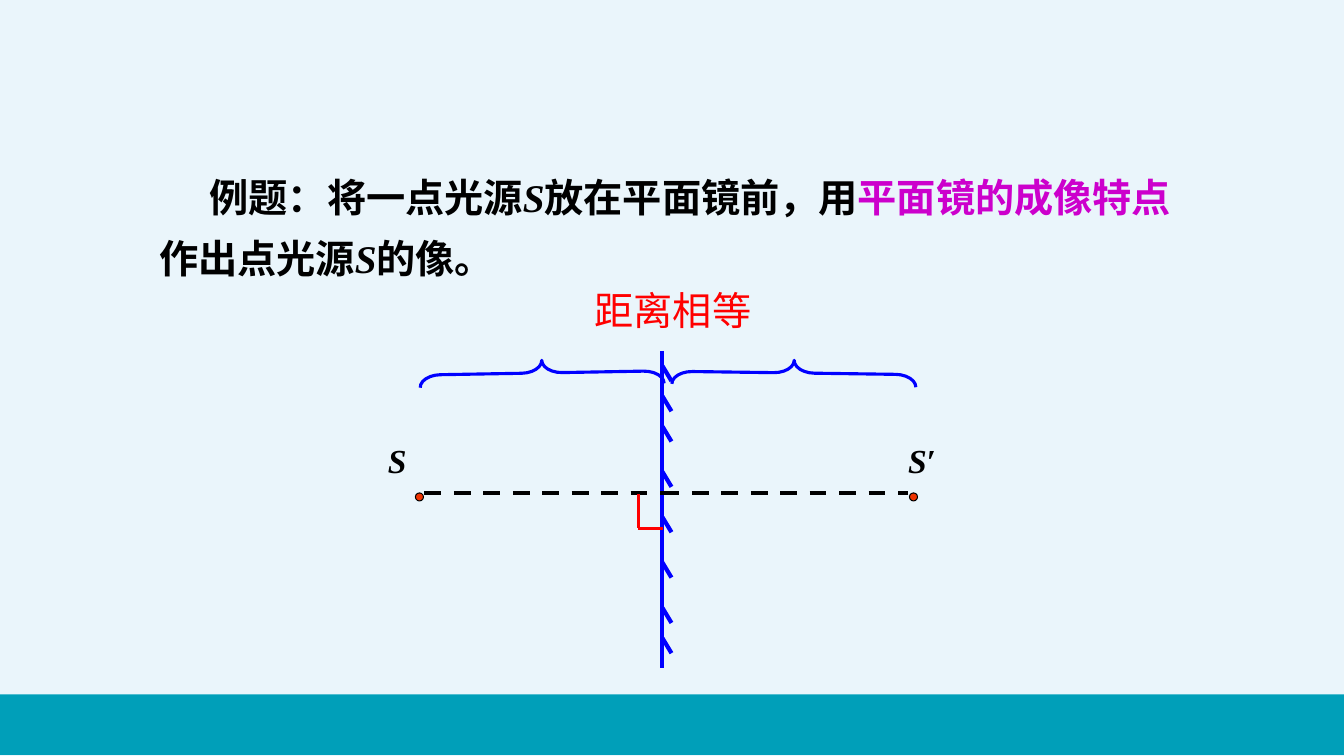
from dataclasses import dataclass

from lxml import etree
from pptx import Presentation
from pptx.dml.color import RGBColor
from pptx.enum.dml import MSO_LINE
from pptx.enum.shapes import MSO_CONNECTOR, MSO_SHAPE
from pptx.enum.text import MSO_AUTO_SIZE, PP_ALIGN
from pptx.oxml.ns import qn
from pptx.util import Inches, Pt

STRAIGHT = MSO_CONNECTOR.STRAIGHT
DASH = MSO_LINE.DASH
RECT, OVAL, BRACE = MSO_SHAPE.RECTANGLE, MSO_SHAPE.OVAL, MSO_SHAPE.LEFT_BRACE
GROW = MSO_AUTO_SIZE.SHAPE_TO_FIT_TEXT
LEFT, CENTER = PP_ALIGN.LEFT, PP_ALIGN.CENTER


@dataclass(frozen=True)
class Theme:
    sky: str = "EAF5FB"
    teal: str = "009FB9"
    blue: str = "0000FF"
    red: str = "FF0000"
    orange: str = "F03300"
    purple: str = "CC00CC"
    black: str = "000000"
    serif: str = "Times New Roman"
    sans: str = "Arial"
    body: int = 28
    label: int = 24
    thick: float = 3
    medium: float = 2.25
    thin: float = 0.75


THEME = Theme()


@dataclass(frozen=True)
class Span:
    text: str
    italic: bool = False
    color: str = THEME.black


@dataclass(frozen=True)
class Note:
    left: float
    top: float
    width: float
    height: float
    spans: tuple[Span, ...]
    size: int
    font: str = THEME.serif
    bold: bool = True
    wrap: bool = True
    align: PP_ALIGN = LEFT
    indent: float = 0
    spacing: float = 1


@dataclass(frozen=True)
class Stroke:
    x1: float
    y1: float
    x2: float
    y2: float
    color: str
    width: float
    dashed: bool = False


@dataclass(frozen=True)
class Figure:
    kind: MSO_SHAPE
    left: float
    top: float
    width: float
    height: float
    fill: str = ""
    line: str = ""
    weight: float = 0
    turn: float = 0
    curve: float = 0


def rgb(color: str) -> RGBColor:
    return RGBColor.from_string(color)


def draw_stroke(shapes, stroke: Stroke) -> None:
    ends = map(Inches, (stroke.x1, stroke.y1, stroke.x2, stroke.y2))
    link = shapes.add_connector(STRAIGHT, *ends)
    link.line.color.rgb = rgb(stroke.color)
    link.line.width = Pt(stroke.width)
    if stroke.dashed:
        link.line.dash_style = DASH
    etree.SubElement(link._element.spPr, qn("a:effectLst"))


def draw_figure(shapes, item: Figure) -> None:
    box = map(Inches, (item.left, item.top, item.width, item.height))
    shape = shapes.add_shape(item.kind, *box)
    shape.shadow.inherit = False
    shape.rotation = item.turn
    if item.curve:
        shape.adjustments[0] = item.curve
    if item.fill:
        shape.fill.solid()
        shape.fill.fore_color.rgb = rgb(item.fill)
    else:
        shape.fill.background()
    if item.line:
        shape.line.color.rgb = rgb(item.line)
        shape.line.width = Pt(item.weight)
    else:
        shape.line.fill.background()


def draw_note(shapes, note: Note) -> None:
    box = map(Inches, (note.left, note.top, note.width, note.height))
    frame = shapes.add_textbox(*box).text_frame
    frame.word_wrap = note.wrap
    frame.auto_size = GROW
    para = frame.paragraphs[0]
    para.alignment = note.align
    para.line_spacing = note.spacing
    if note.indent:
        para._p.get_or_add_pPr().set("indent", str(Inches(note.indent)))
    for span in note.spans:
        run = para.add_run()
        run.text = span.text
        font = run.font
        font.name, font.size = note.font, Pt(note.size)
        font.bold, font.italic = note.bold, span.italic
        font.color.rgb = rgb(span.color)


# Mirror with hatch marks on its back
MIRROR = 6.57
HATCHES = (3.63, 3.93, 4.23, 4.68, 5.13, 5.58, 6.03, 6.33)
mirror = [Stroke(MIRROR, 3.48, MIRROR, 6.63, THEME.blue, THEME.thick)]
mirror += [Stroke(MIRROR, y, MIRROR + 0.09, y + 0.15, THEME.blue, THEME.thick)
           for y in HATCHES]

# Dashed line from the source to its image, with the right angle
AXIS = 4.89
rays = [Stroke(x1, AXIS, x2, AXIS, THEME.black, THEME.thick, True)
        for x1, x2 in ((4.21, MIRROR), (MIRROR, 9.01))]
angle = [Stroke(6.33, 4.9, 6.33, 5.24, THEME.red, THEME.medium),
         Stroke(6.33, 5.24, 6.58, 5.24, THEME.red, THEME.medium)]

# Points and braces
dots = [Figure(OVAL, x, AXIS, 0.08, 0.08, THEME.orange, THEME.black, THEME.thin)
        for x in (4.12, 9.02)]
braces = [Figure(BRACE, x, 2.49, 0.25, 2.42, line=THEME.blue,
                 weight=THEME.medium, turn=turn, curve=0.81)
          for x, turn in ((5.25, 89), (7.75, 90.8))]
band = Figure(RECT, -0.03, 6.89, 13.39, 0.6, THEME.teal)

# Texts
notes = [
    Note(3.75, 4.32, 0.5, 0.5, (Span("S", True),), THEME.label),
    Note(8.91, 4.32, 1, 0.5, (Span("S", True), Span("′")), THEME.label),
    Note(1.48, 1.53, 10.45, 1.26, (
        Span("例题：将一点光源"),
        Span("S", True),
        Span("放在平面镜前，用"),
        Span("平面镜的成像特点", color=THEME.purple),
        Span("作出点光源"),
        Span("S", True),
        Span("的像。"),
    ), THEME.body, indent=0.5, spacing=1.3),
    Note(5.79, 2.79, 1.77, 0.57, (Span("距离相等", color=THEME.red),),
         THEME.body, THEME.sans, bold=False, wrap=False, align=CENTER),
]


def main() -> None:
    deck = Presentation()
    deck.slide_width, deck.slide_height = Inches(13.33), Inches(7.5)
    slide = deck.slides.add_slide(deck.slide_layouts[6])
    slide.background.fill.solid()
    slide.background.fill.fore_color.rgb = rgb(THEME.sky)
    shapes = slide.shapes

    draw_figure(shapes, band)
    glass = shapes.add_group_shape().shapes
    for stroke in mirror:
        draw_stroke(glass, stroke)
    for stroke in rays:
        draw_stroke(shapes, stroke)
    corner = shapes.add_group_shape().shapes
    for stroke in angle:
        draw_stroke(corner, stroke)
    for item in dots + braces:
        draw_figure(shapes, item)
    for note in notes:
        draw_note(shapes, note)
    deck.save("out.pptx")


if __name__ == "__main__":
    main()
